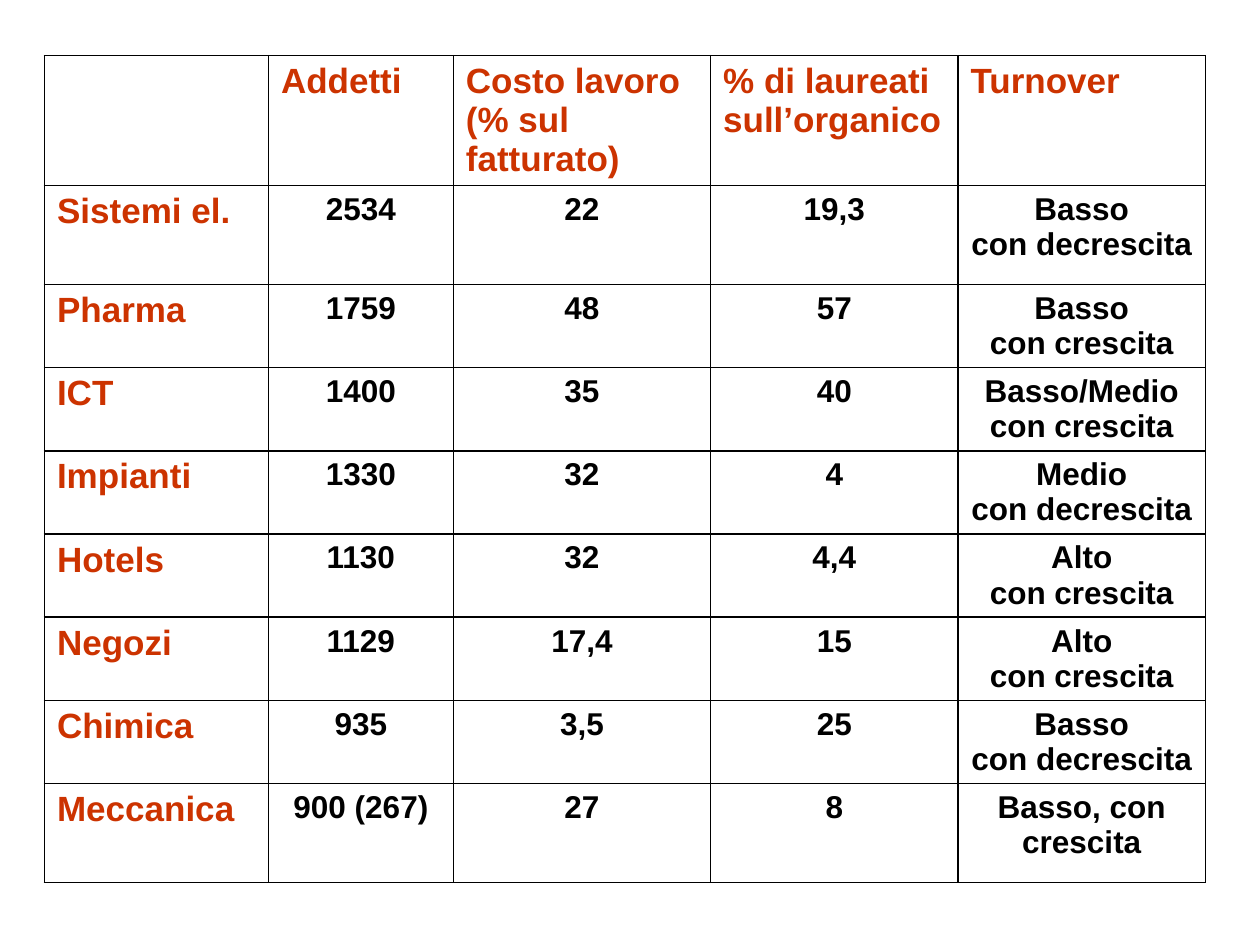
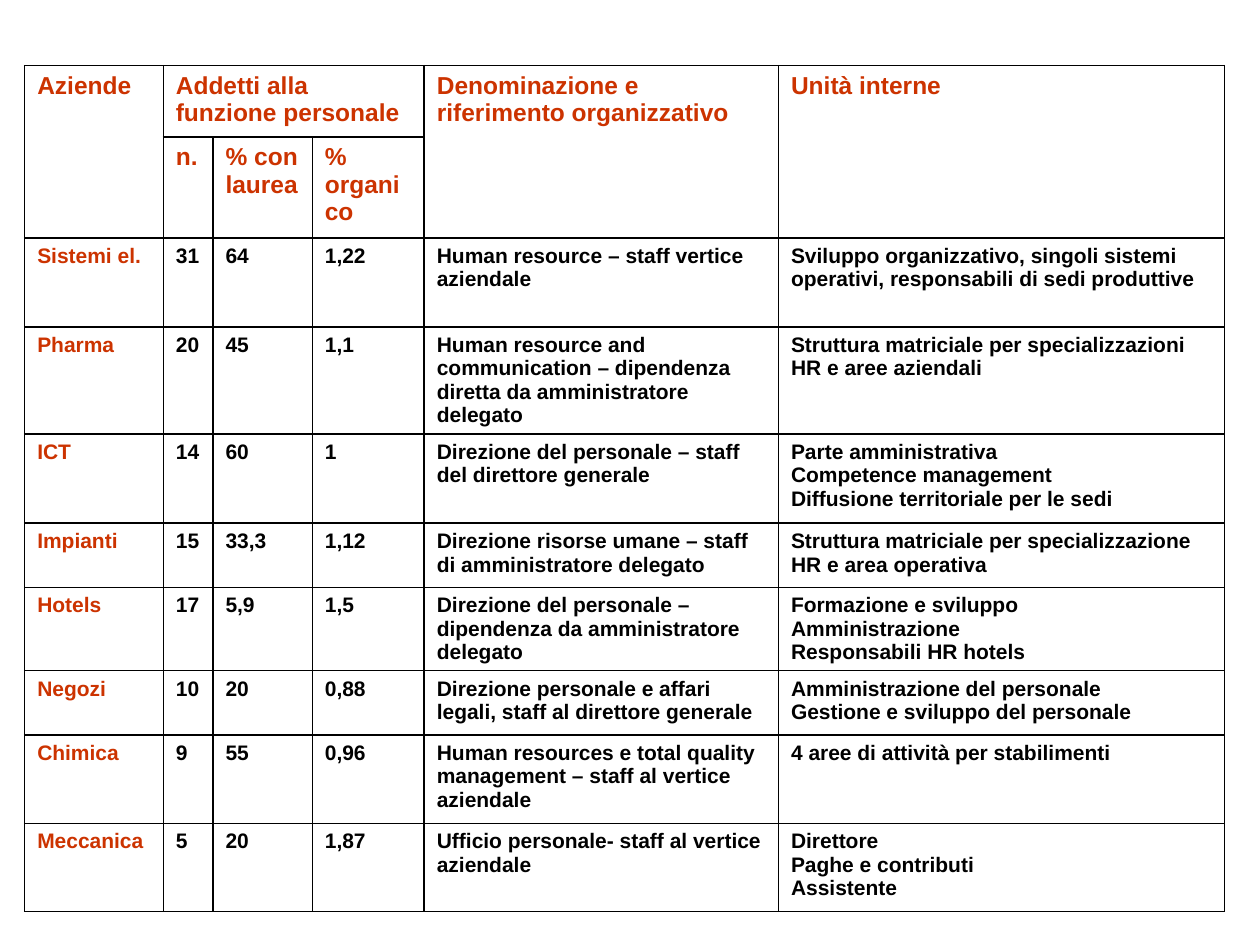
from dataclasses import dataclass

from lxml import etree
from pptx import Presentation
from pptx.dml.color import RGBColor
from pptx.enum.text import PP_ALIGN
from pptx.oxml.ns import qn
from pptx.slide import Slide
from pptx.util import Pt

LEFT, CENTER = PP_ALIGN.LEFT, PP_ALIGN.CENTER
FONT = "Arial"
COLORS = {"heading": "CC3300", "body": "000000", "border": "000000"}
BLANK_LAYOUT = 6

COMPANIES = ["Sistemi el.", "Pharma", "ICT", "Impianti",
             "Hotels", "Negozi", "Chimica", "Meccanica"]


@dataclass(frozen=True)
class CompanyTable:
    left: float
    top: float
    widths: list[float]
    heights: list[float]
    headings: list[list[str]]
    facts: list[list[str]]  # one row per company
    heading_size: float
    company_size: float
    fact_size: float
    fact_align: PP_ALIGN
    merges: tuple[tuple[int, int, int, int], ...] = ()  # first row, column; last row, column


WORKFORCE = CompanyTable(
    left=25.4, top=31.8,
    widths=[128, 105.7, 147, 141.4, 141.4],
    heights=[73.7, 56.6] + [47.55] * 6 + [56.6],
    headings=[["", "Addetti", "Costo lavoro (% sul fatturato)",
               "% di laureati sull’organico", "Turnover"]],
    facts=[
        ["2534", "22", "19,3", "Basso\ncon decrescita"],
        ["1759", "48", "57", "Basso\ncon crescita"],
        ["1400", "35", "40", "Basso/Medio\ncon crescita"],
        ["1330", "32", "4", "Medio\ncon decrescita"],
        ["1130", "32", "4,4", "Alto\ncon crescita"],
        ["1129", "17,4", "15", "Alto\ncon crescita"],
        ["935", "3,5", "25", "Basso\ncon decrescita"],
        ["900 (267)", "27", "8", "Basso, con crescita"],
    ],
    heading_size=20, company_size=20, fact_size=18, fact_align=CENTER,
)

PERSONNEL_FUNCTION = CompanyTable(
    left=14.1, top=37.5,
    widths=[79.2, 28.4, 56.8, 64, 202.4, 255],
    heights=[40.8, 57.6, 51, 61.1, 51, 36.7, 47.6, 36.8, 50.4, 50.4],
    headings=[
        ["Aziende", "Addetti alla funzione personale", "", "",
         "Denominazione e riferimento organizzativo", "Unità interne"],
        ["", "n.", "% con laurea", "% organico", "", ""],
    ],
    facts=[
        ["31", "64", "1,22", "Human resource – staff vertice aziendale",
         "Sviluppo organizzativo, singoli sistemi operativi, responsabili di sedi produttive"],
        ["20", "45", "1,1",
         "Human resource and communication – dipendenza diretta da amministratore delegato",
         "Struttura matriciale per specializzazioni HR e aree aziendali"],
        ["14", "60", "1", "Direzione del personale – staff del direttore generale",
         "Parte amministrativa\nCompetence management\nDiffusione territoriale per le sedi"],
        ["15", "33,3", "1,12", "Direzione risorse umane – staff di amministratore delegato",
         "Struttura matriciale per specializzazione HR e area operativa"],
        ["17", "5,9", "1,5", "Direzione del personale – dipendenza da amministratore delegato",
         "Formazione e sviluppo\nAmministrazione\nResponsabili HR hotels"],
        ["10", "20", "0,88", "Direzione personale e affari legali, staff al direttore generale",
         "Amministrazione del personale\nGestione e sviluppo del personale"],
        ["9", "55", "0,96",
         "Human resources e total quality management – staff al vertice aziendale",
         "4 aree di attività per stabilimenti"],
        ["5", "20", "1,87", "Ufficio personale- staff al vertice aziendale",
         "Direttore\nPaghe e contributi\nAssistente"],
    ],
    heading_size=14, company_size=12, fact_size=12, fact_align=LEFT,
    merges=((0, 0, 1, 0), (0, 1, 0, 3), (0, 4, 1, 4), (0, 5, 1, 5)),
)


def outline_cell(cell) -> None:
    properties = cell._tc.get_or_add_tcPr()
    for side in ("a:lnL", "a:lnR", "a:lnT", "a:lnB"):
        line = etree.SubElement(properties, qn(side), w=str(Pt(1)))
        fill = etree.SubElement(line, qn("a:solidFill"))
        etree.SubElement(fill, qn("a:srgbClr"), val=COLORS["border"])


def write_cell(cell, text: str, size: float, color: str, align: PP_ALIGN) -> None:
    cell.text_frame.text = text
    for paragraph in cell.text_frame.paragraphs:
        paragraph.alignment = align
        font = paragraph.font
        font.name, font.size, font.bold = FONT, Pt(size), True
        font.color.rgb = RGBColor.from_string(COLORS[color])


def draw_company_table(slide: Slide, content: CompanyTable) -> None:
    companies = [[name, *facts] for name, facts in zip(COMPANIES, content.facts)]
    rows = content.headings + companies
    table = slide.shapes.add_table(
        len(rows), len(content.widths), Pt(content.left), Pt(content.top),
        Pt(sum(content.widths)), Pt(sum(content.heights))).table
    table.first_row = table.horz_banding = False
    for column, width in zip(table.columns, content.widths):
        column.width = Pt(width)
    for row, height in zip(table.rows, content.heights):
        row.height = Pt(height)

    for r, texts in enumerate(rows):
        for c, text in enumerate(texts):
            cell = table.cell(r, c)
            outline_cell(cell)
            cell.fill.background()
            if r < len(content.headings):
                write_cell(cell, text, content.heading_size, "heading", LEFT)
            elif c == 0:
                write_cell(cell, text, content.company_size, "heading", LEFT)
            else:
                write_cell(cell, text, content.fact_size, "body", content.fact_align)

    for top, left, bottom, right in content.merges:
        table.cell(top, left).merge(table.cell(bottom, right))


def main() -> None:
    deck = Presentation()
    deck.slide_width, deck.slide_height = Pt(720), Pt(540)
    for content in (WORKFORCE, PERSONNEL_FUNCTION):
        slide = deck.slides.add_slide(deck.slide_layouts[BLANK_LAYOUT])
        draw_company_table(slide, content)
    deck.save("out.pptx")


if __name__ == "__main__":
    main()
